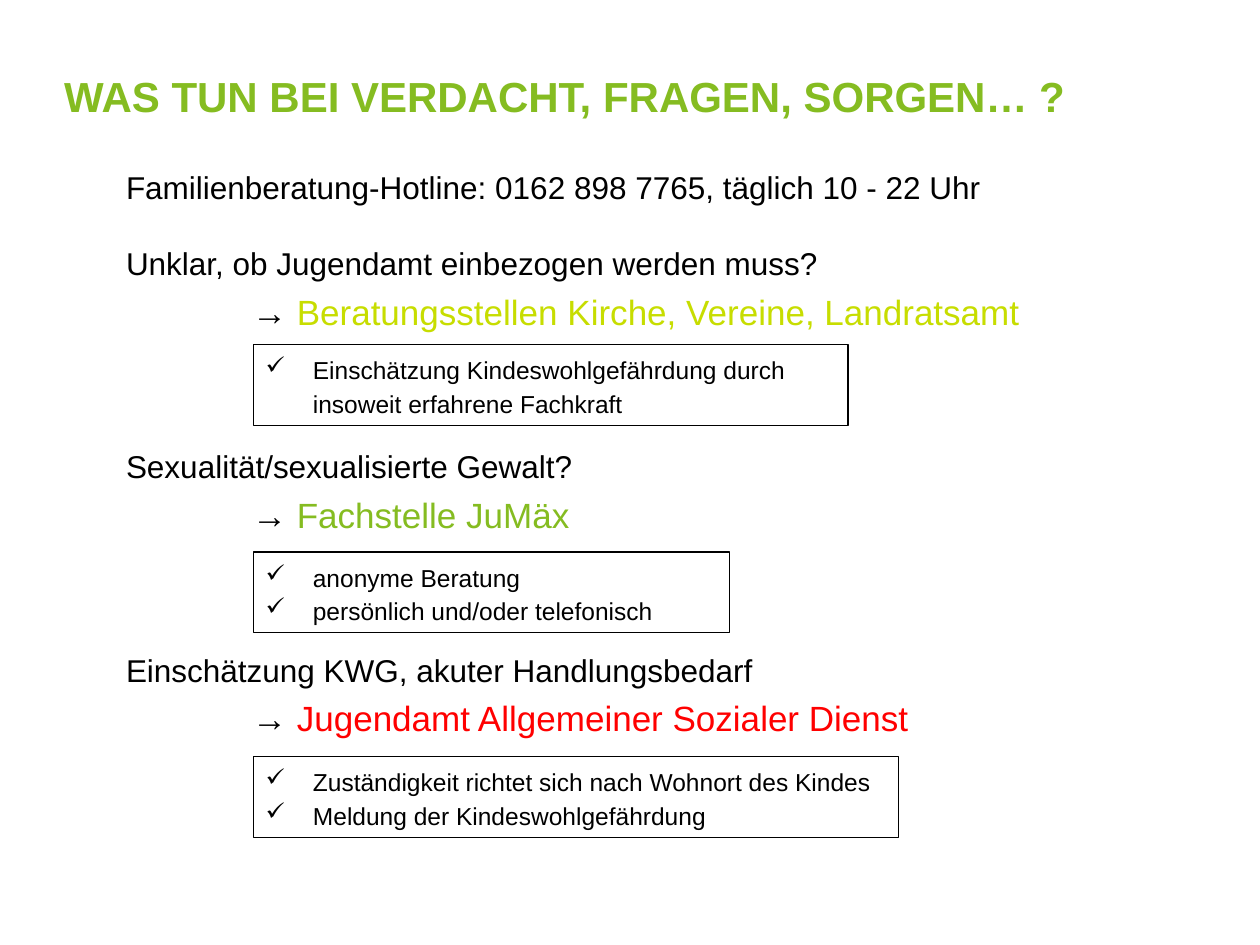
from pptx import Presentation
from pptx.dml.color import RGBColor
from pptx.enum.shapes import MSO_SHAPE
from pptx.enum.text import MSO_ANCHOR, MSO_AUTO_SIZE, PP_ALIGN
from pptx.oxml.ns import qn
from pptx.util import Pt
from lxml.etree import SubElement

THEME = {
    "font": "Arial",
    "black": "000000", "white": "FFFFFF",
    "green": "85BC21", "lime": "C7DD00", "red": "FF0000",
    "title": 24, "question": 18, "answer": 20, "note": 14,
}


def add_span(para, text, size, color, bold=False):
    span = para.add_run()
    span.text = text
    formats = {"name": THEME["font"], "size": Pt(THEME[size]), "bold": bold}
    for name, value in formats.items():
        setattr(span.font, name, value)
    span.font.color.rgb = RGBColor.from_string(THEME[color])


def set_frame(frame, side, edge):
    formats = {
        "word_wrap": True, "auto_size": MSO_AUTO_SIZE.NONE,
        "vertical_anchor": MSO_ANCHOR.TOP,
        "margin_left": Pt(side), "margin_right": Pt(side),
        "margin_top": Pt(edge), "margin_bottom": Pt(edge),
    }
    for name, value in formats.items():
        setattr(frame, name, value)


deck = Presentation()
deck.slide_width, deck.slide_height = Pt(720), Pt(540)
page = deck.slides.add_slide(deck.slide_layouts[5])

# Title
title = page.shapes.title
title.left, title.top, title.width, title.height = Pt(36.7), Pt(40), Pt(669), Pt(41)
set_frame(title.text_frame, 0, 0)
para = title.text_frame.paragraphs[0]
para.alignment = PP_ALIGN.LEFT
add_span(para, "WAS TUN BEI VERDACHT, FRAGEN, SORGEN… ?", "title", "green", True)

# Hotline, then questions with the office in charge
questions = [
    (22, "Unklar, ob Jugendamt einbezogen werden muss?",
     "Beratungsstellen Kirche, Vereine, Landratsamt", "lime"),
    (66, "Sexualität/sexualisierte Gewalt?", "Fachstelle JuMäx", "green"),
    (66, "Einschätzung KWG, akuter Handlungsbedarf",
     "Jugendamt Allgemeiner Sozialer Dienst", "red"),
]
body = page.shapes.add_textbox(Pt(72), Pt(96), Pt(550), Pt(325)).text_frame
set_frame(body, 0, 0)
add_span(body.paragraphs[0],
         "Familienberatung-Hotline: 0162 898 7765, täglich 10 - 22 Uhr",
         "question", "black")
for gap, question, office, color in questions:
    para = body.add_paragraph()
    para.space_before = Pt(gap)
    add_span(para, question, "question", "black")
    para = body.add_paragraph()
    para.space_before = Pt(4.5)
    para._p.get_or_add_pPr().set("marL", str(Pt(72)))
    add_span(para, "→ ", "answer", "black")
    add_span(para, office, "answer", color)

# Framed check lists
check_lists = [
    (197, 340, ["Einschätzung Kindeswohlgefährdung durch insoweit erfahrene Fachkraft"]),
    (315.4, 272, ["anonyme Beratung", "persönlich und/oder telefonisch"]),
    (432.4, 368.6, ["Zuständigkeit richtet sich nach Wohnort des Kindes",
                    "Meldung der Kindeswohlgefährdung"]),
]
for top, width, notes in check_lists:
    box = page.shapes.add_shape(MSO_SHAPE.RECTANGLE, Pt(144.7), Pt(top), Pt(width), Pt(46))
    box.shadow.inherit = False
    box.fill.solid()
    box.fill.fore_color.rgb = RGBColor.from_string(THEME["white"])
    box.line.color.rgb = RGBColor.from_string(THEME["black"])
    box.line.width = Pt(0.75)
    set_frame(box.text_frame, 7.2, 3.6)
    for index, note in enumerate(notes):
        para = box.text_frame.add_paragraph() if index else box.text_frame.paragraphs[0]
        para.alignment = PP_ALIGN.LEFT
        para.line_spacing = 1.15
        props = para._p.get_or_add_pPr()
        props.set("marL", str(Pt(27)))
        props.set("indent", str(Pt(-27)))
        SubElement(props, qn("a:buChar"), char="✓")
        add_span(para, note, "note", "black")

deck.save("out.pptx")
